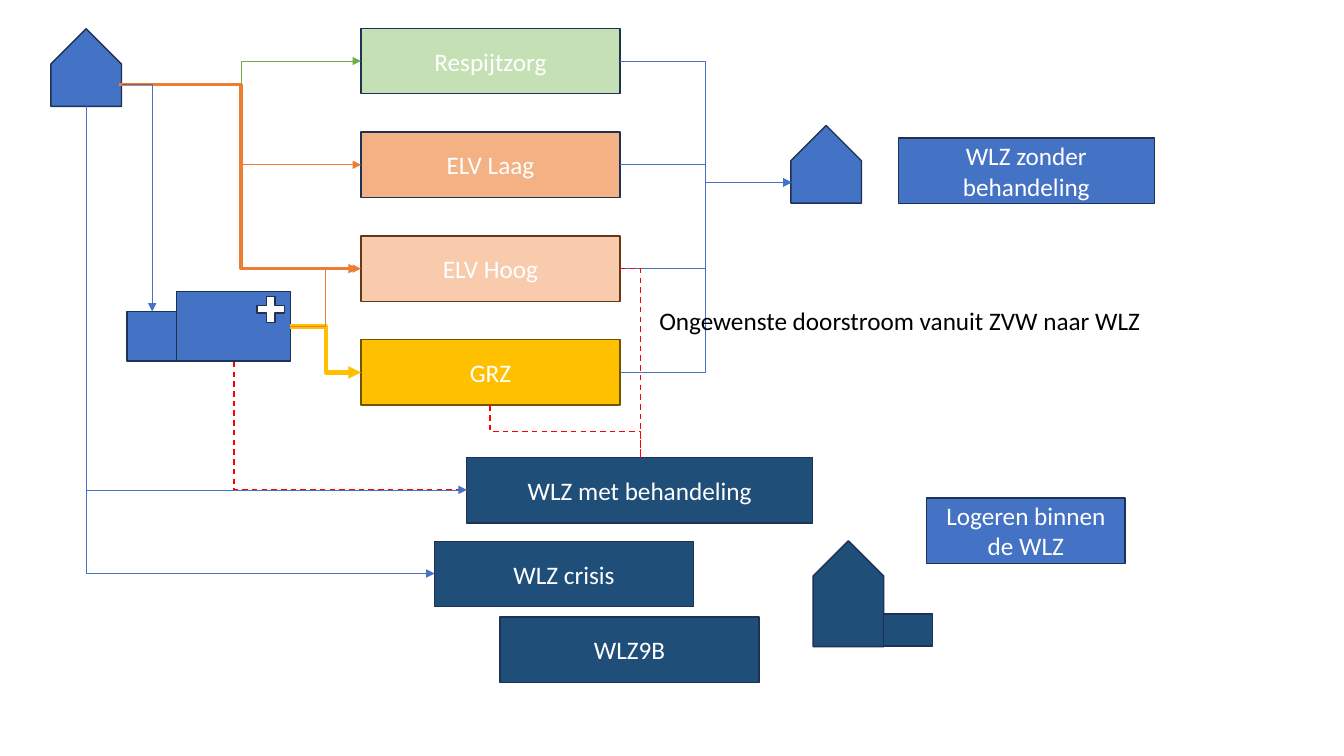
from lxml.etree import SubElement
from pptx import Presentation
from pptx.dml.color import RGBColor
from pptx.enum.dml import MSO_LINE
from pptx.enum.shapes import MSO_CONNECTOR, MSO_SHAPE
from pptx.enum.text import MSO_ANCHOR, MSO_AUTO_SIZE, PP_ALIGN
from pptx.oxml.ns import qn
from pptx.util import Inches, Pt

COLORS = {
    "blue": "4472C4", "navy": "1F4E79", "edge": "1E3256",
    "mint": "C5E0B4", "green": "70AD47",
    "peach": "F8CBAD", "brown": "683715", "apricot": "F4B183", "orange": "ED7D31",
    "gold": "FFC000", "olive": "705400",
    "red": "FF0000", "white": "FFFFFF", "black": "000000",
}


class Board:
    def __init__(self, slide, font="Calibri", size=18):
        self.slide, self.font, self.size = slide, font, size

    def color(self, name):
        return RGBColor.from_string(COLORS[name])

    def letter(self, para, text, color):
        """Fill a paragraph with text in the board's font."""
        para.text = text
        para.font.name, para.font.size = self.font, Pt(self.size)
        para.font.color.rgb = self.color(color)

    def shape(self, kind, x, y, w, h, fill, edge="edge", group=None):
        home = (group or self.slide).shapes
        item = home.add_shape(kind, Inches(x), Inches(y), Inches(w), Inches(h))
        item.shadow.inherit = False
        item.fill.solid()
        item.fill.fore_color.rgb = self.color(fill)
        item.line.color.rgb = self.color(edge)
        item.line.width = Pt(1)
        return item

    def box(self, text, x, y, fill, w=2.57, edge="edge"):
        frame = self.shape(MSO_SHAPE.RECTANGLE, x, y, w, BOX_H, fill, edge).text_frame
        frame.word_wrap = True
        frame.vertical_anchor = MSO_ANCHOR.MIDDLE
        self.letter(frame.paragraphs[0], text, "white")
        frame.paragraphs[0].alignment = PP_ALIGN.CENTER

    def house(self, x, y, fill, w=0.77, group=None):
        """Draw a pentagon whose tip points up; x, y and w are before the turn."""
        item = self.shape(MSO_SHAPE.PENTAGON, x, y, w, 0.7, fill, group=group)
        item.rotation = 270

    def elbow(self, start, end, color, width=0.5, turns=2, down=False, dash=False, adj=None):
        """Bend once or twice; down makes the line leave its start vertically."""
        (x1, y1), (x2, y2) = start, end
        if down:
            mx, my = (x1 + x2) / 2, (y1 + y2) / 2
            w, h = y2 - y1, x2 - x1
            x1, y1, x2, y2 = mx - w / 2, my - h / 2, mx + w / 2, my + h / 2
        link = self.slide.shapes.add_connector(
            MSO_CONNECTOR.ELBOW, Inches(x1), Inches(y1), Inches(x2), Inches(y2))
        link.line.color.rgb = self.color(color)
        link.line.width = Pt(width)
        props = link._element.spPr
        if down:
            props.find(qn("a:xfrm")).set("rot", "16200000")
            props.find(qn("a:xfrm")).set("flipH", "1")
        geom = props.find(qn("a:prstGeom"))
        if turns == 1:
            geom.set("prst", "bentConnector2")
        if adj:
            SubElement(geom.find(qn("a:avLst")), qn("a:gd"),
                       name="adj1", fmla=f"val {round(adj * 100000)}")
        if dash:
            link.line.dash_style = MSO_LINE.DASH
        else:
            SubElement(props.find(qn("a:ln")), qn("a:tailEnd"), type="triangle")
        SubElement(props, qn("a:effectLst"))

    def label(self, text, x, y, w, h):
        frame = self.slide.shapes.add_textbox(
            Inches(x), Inches(y), Inches(w), Inches(h)).text_frame
        frame.word_wrap = False
        frame.auto_size = MSO_AUTO_SIZE.SHAPE_TO_FIT_TEXT
        self.letter(frame.paragraphs[0], text, "black")


BOX_H = 0.65
CARE_X, CARE_END = 3.58, 6.15
CARE = [
    ("Respijtzorg", "mint", "edge"),
    ("ELV Laag", "apricot", "edge"),
    ("ELV Hoog", "peach", "brown"),
    ("GRZ", "gold", "olive"),
]
TOPS = [0.28 + 1.03 * i for i in range(len(CARE))]
MIDS = [top + BOX_H / 2 for top in TOPS]


def draw(board):
    for (text, fill, edge), top in zip(CARE, TOPS):
        board.box(text, CARE_X, top, fill, edge=edge)
    board.box("WLZ met behandeling", 4.63, 4.54, "navy", w=3.43)
    board.box("WLZ crisis", 4.31, 5.37, "navy")
    board.box("WLZ9B", 4.96, 6.12, "navy")
    board.box("WLZ zonder behandeling", 8.91, 1.37, "blue", w=2.54)
    board.box("Logeren binnen de WLZ", 9.19, 4.94, "blue", w=1.97)

    board.house(0.47, 0.32, "blue")
    board.house(7.81, 1.28, "blue")
    home = board.slide.shapes.add_group_shape()
    board.house(7.89, 5.54, "navy", w=1.05, group=home)
    board.shape(MSO_SHAPE.RECTANGLE, 8.76, 6.09, 0.49, 0.32, "navy", group=home)

    clinic = board.slide.shapes.add_group_shape()
    board.shape(MSO_SHAPE.RECTANGLE, 1.75, 2.89, 1.13, 0.69, "blue", group=clinic)
    board.shape(MSO_SHAPE.RECTANGLE, 1.26, 3.09, 0.49, 0.49, "blue", group=clinic)
    plus = board.shape(MSO_SHAPE.CROSS, 2.55, 2.94, 0.27, 0.26, "white", group=clinic)
    plus.adjustments[0] = 0.355

    door, ward = (1.21, 0.84), (2.88, 3.24)
    respite, low, high, rehab = [(CARE_X, mid) for mid in MIDS]
    board.elbow(door, respite, "green")
    board.elbow(door, low, "orange")
    board.elbow((1.18, 0.84), (3.55, MIDS[2]), "orange", 2.25, adj=0.511)
    board.elbow(door, (1.51, 3.09), "blue", turns=1)
    board.elbow(ward, rehab, "gold", 3)
    board.elbow(ward, high, "orange")
    for mid in MIDS:
        board.elbow((CARE_END, mid), (7.85, 1.81), "blue")

    floor, treat, crisis = (0.86, 1.05), (4.63, 4.86), (4.31, 5.69)
    board.elbow((2.32, 3.59), treat, "red", 1, turns=1, down=True, dash=True)
    for goal in (treat, crisis):
        board.elbow(floor, goal, "blue", turns=1, down=True)
    roof = (6.35, 4.54)
    board.elbow((4.86, 4.02), roof, "red", 1, down=True, dash=True)
    board.elbow((CARE_END, MIDS[2]), roof, "red", 1, turns=1, dash=True)
    board.label("Ongewenste doorstroom vanuit ZVW naar WLZ", 6.44, 2.98, 5.15, 0.4)


def main():
    deck = Presentation()
    deck.slide_width, deck.slide_height = Inches(13.33), Inches(7.5)
    draw(Board(deck.slides.add_slide(deck.slide_layouts[6])))
    deck.save("out.pptx")


if __name__ == "__main__":
    main()
